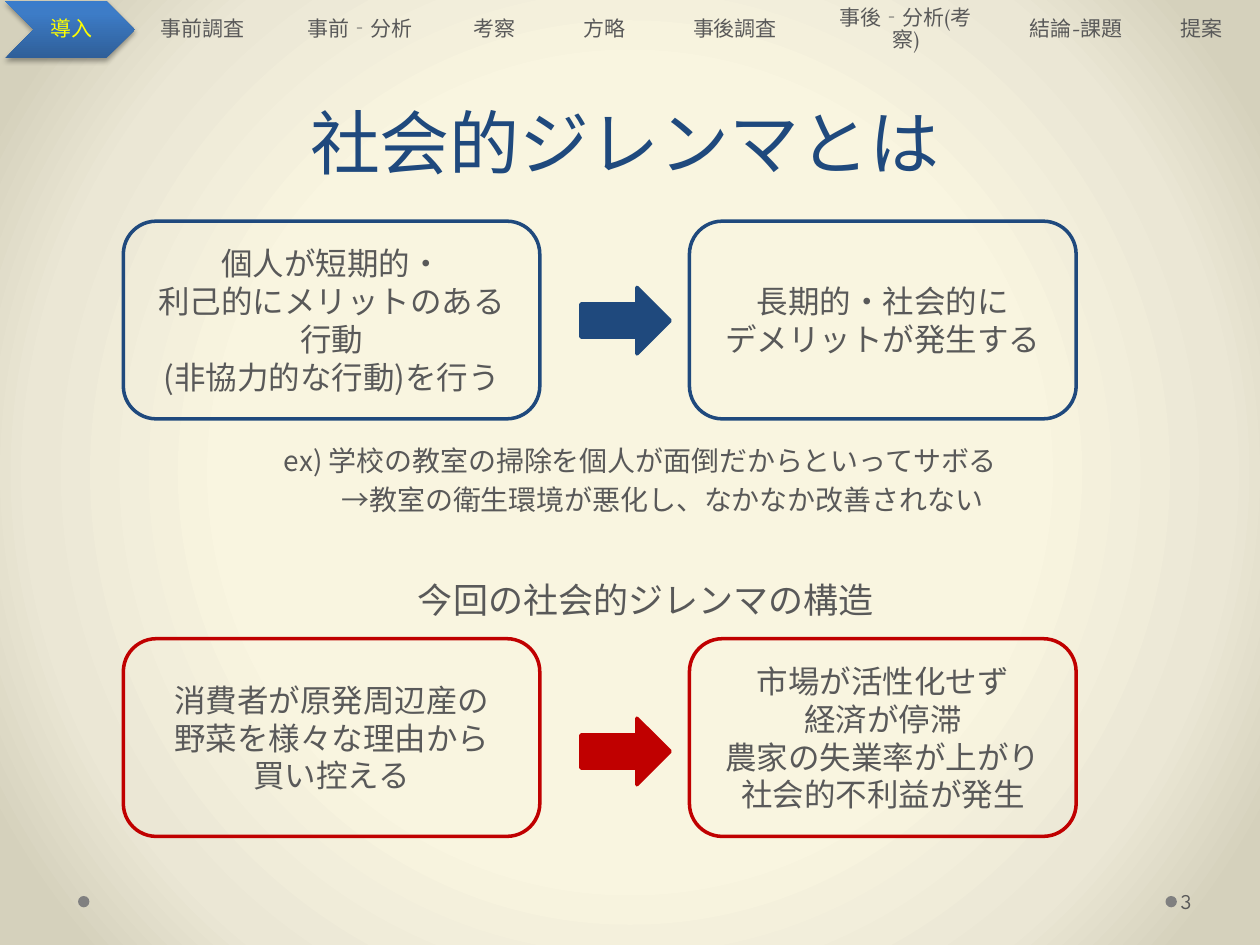
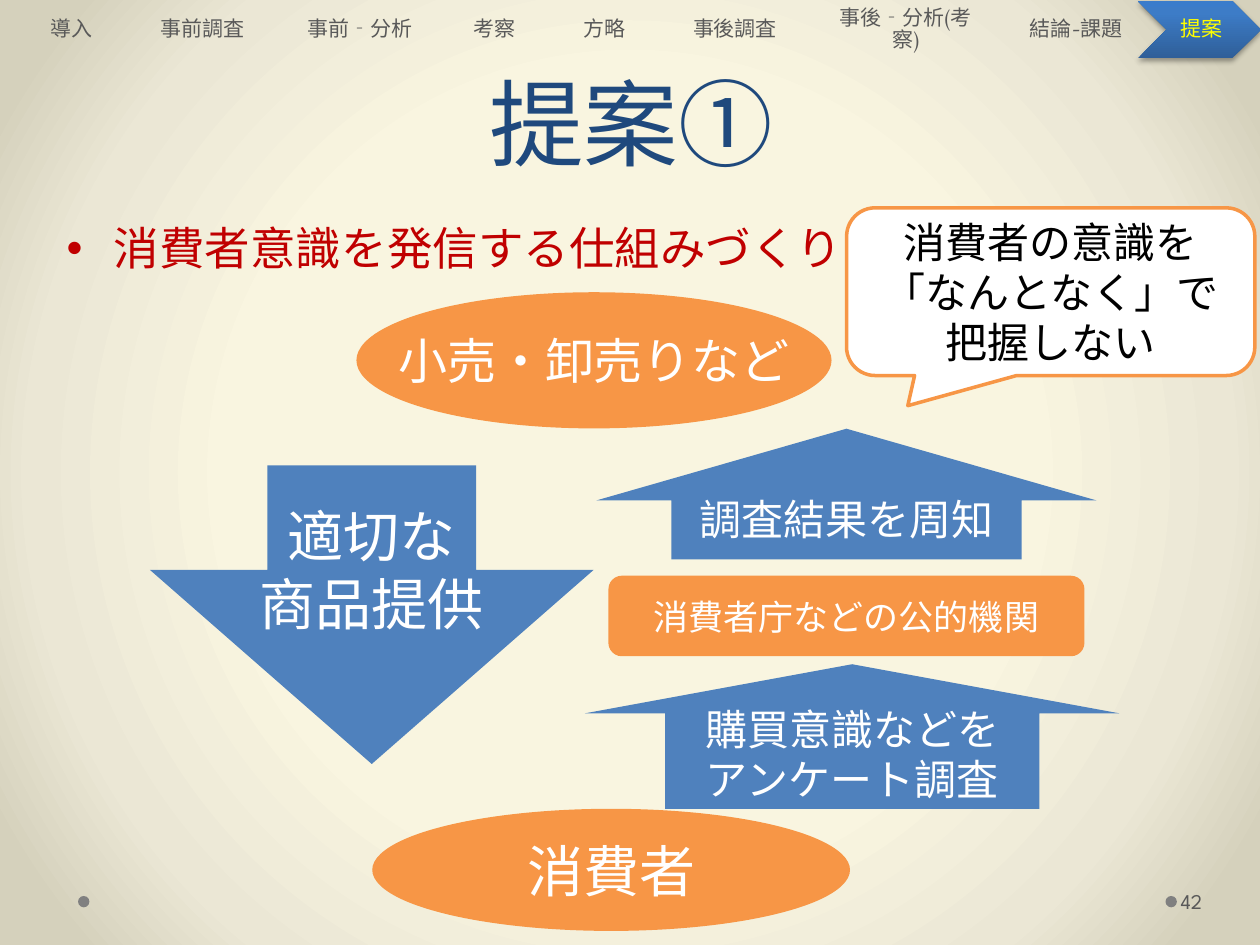
import pptx
import pptx.util
import pptx.dml.color
import pptx.enum.shapes
import pptx.enum.text
import pptx.oxml
import pptx.oxml.ns

Pt = pptx.util.Pt
RGB = pptx.dml.color.RGBColor
SHAPE = pptx.enum.shapes.MSO_SHAPE
ANCHOR = pptx.enum.text.MSO_ANCHOR
ALIGN = pptx.enum.text.PP_ALIGN

NAVY = RGB(0x1F, 0x49, 0x7D)
RED = RGB(0xC0, 0x00, 0x00)
BLUE = RGB(0x4F, 0x81, 0xBD)
ORANGE = RGB(0xF7, 0x96, 0x46)
TEXT_GREY = RGB(0x59, 0x59, 0x59)
DOT_GREY = RGB(0x80, 0x80, 0x80)
YELLOW = RGB(0xFF, 0xFF, 0x00)
WHITE = RGB(0xFF, 0xFF, 0xFF)
BLACK = RGB(0x00, 0x00, 0x00)
PAPER_STOPS = [(50, RGB(0xF9, 0xF5, 0xE0)), (76, RGB(0xEB, 0xE7, 0xD5)), (92, RGB(0xD5, 0xD1, 0xBC))]
CHEVRON_STOPS = [(0, RGB(0x2F, 0x5F, 0x99)), (80, RGB(0x3D, 0x7C, 0xC7)), (100, RGB(0x3A, 0x7C, 0xCB))]
RADIAL = '<a:path path="circle"><a:fillToRect l="50000" t="50000" r="50000" b="50000"/></a:path>'
UPWARD = '<a:lin ang="16200000" scaled="0"/>'

BODY_FONT, HEAD_FONT, NUMBER_FONT = "Noto Sans CJK JP", "Vollkorn", "League Spartan"
NS = 'xmlns:a="http://schemas.openxmlformats.org/drawingml/2006/main"'

SECTIONS = [("導入", 42), ("事前調査", 64), ("事前‐分析", 73.4), ("考察", 37.4), ("方略", 44.6),
            ("事後調査", 62), ("事後‐分析(考察)", 90), ("結論-課題", 62), ("提案", 38)]
NAV_LEFT, NAV_TOP, NAV_HEIGHT, NAV_GAP = 19, 0.7, 32.4, 21.5
CHEVRON_OVERHANG = 16

CENTRED = {"alignment": ALIGN.CENTER}
MIDDLE = {"vertical_anchor": ANCHOR.MIDDLE, "word_wrap": True}
UNWRAPPED = {"vertical_anchor": ANCHOR.MIDDLE, "word_wrap": False}


def apply(target, values):
    for name, value in values.items():
        setattr(target, name, value)


def insets(left, top, right, bottom):
    return {"margin_left": Pt(left), "margin_top": Pt(top),
            "margin_right": Pt(right), "margin_bottom": Pt(bottom)}


def set_gradient(properties, stops, direction):
    """Replace the solid fill inside properties with a gradient."""
    stop_xml = "".join(f'<a:gs pos="{pos * 1000}"><a:srgbClr val="{colour}"/></a:gs>'
                       for pos, colour in stops)
    gradient = pptx.oxml.parse_xml(
        f'<a:gradFill {NS} rotWithShape="1"><a:gsLst>{stop_xml}</a:gsLst>{direction}</a:gradFill>')
    solid = properties.find(pptx.oxml.ns.qn("a:solidFill"))
    properties.replace(solid, gradient)


def write(frame, lines, size, colour, font=BODY_FONT, frame_format=MIDDLE, line_format=CENTRED):
    """Fill a text frame with one paragraph per line, and return the paragraphs."""
    frame.text = "\n".join(lines)
    apply(frame, frame_format)
    for paragraph in frame.paragraphs:
        apply(paragraph, line_format)
        for run in paragraph.runs:
            apply(run.font, {"name": font, "size": Pt(size)})
            run.font.color.rgb = colour
            run.font._element.find(pptx.oxml.ns.qn("a:latin")).addnext(
                pptx.oxml.parse_xml(f'<a:ea {NS} typeface="{BODY_FONT}"/>'))
    return frame.paragraphs


def add_text(slide, box, lines, size, colour, **formats):
    frame = slide.shapes.add_textbox(*map(Pt, box)).text_frame
    return write(frame, lines, size, colour, **formats)


def add_figure(slide, kind, box, fill=None, line=None, adjustments=()):
    figure = slide.shapes.add_shape(kind, *map(Pt, box))
    figure.shadow.inherit = False
    for index, value in enumerate(adjustments):
        figure.adjustments[index] = value
    for format_fill, colour in ((figure.fill, fill), (figure.line.fill, line)):
        if colour is None:
            format_fill.background()
        else:
            format_fill.solid()
            format_fill.fore_color.rgb = colour
    if line is not None:
        figure.line.width = Pt(2)
    return figure


def add_chevron(slide, box):
    properties = add_figure(slide, SHAPE.CHEVRON, box, BLUE)._element.spPr
    set_gradient(properties, CHEVRON_STOPS, UPWARD)
    properties.find(pptx.oxml.ns.qn("a:effectLst")).append(pptx.oxml.parse_xml(
        f'<a:outerShdw {NS} blurRad="{Pt(3.1)}" dist="{Pt(1.8)}" dir="5400000" rotWithShape="0">'
        '<a:srgbClr val="000000"><a:alpha val="35000"/></a:srgbClr></a:outerShdw>'))


def add_navigation(slide, current):
    left = NAV_LEFT
    for section, width in SECTIONS:
        if section == current:
            add_chevron(slide, (left - CHEVRON_OVERHANG, NAV_TOP,
                                width + 2 * CHEVRON_OVERHANG, NAV_HEIGHT))
        add_text(slide, (left, NAV_TOP, width, NAV_HEIGHT), [section], 12,
                 YELLOW if section == current else TEXT_GREY, font=HEAD_FONT,
                 frame_format=MIDDLE | insets(3.6, 1.4, 1.4, 1.4),
                 line_format=CENTRED | {"line_spacing": 0.9})
        left += width + NAV_GAP


def add_footer(slide, number):
    for left in (44.6, 666):
        add_figure(slide, SHAPE.OVAL, (left, 512, 6.5, 6.5), DOT_GREY)
    add_text(slide, (672.5, 500.4, 44, 28.8), [number], 12, TEXT_GREY, font=NUMBER_FONT,
             frame_format=MIDDLE | insets(2.2, 3.6, 3.6, 3.6), line_format={})


def start_slide(deck, title, title_box, title_size, section, number):
    slide = deck.slides.add_slide(deck.slide_layouts[5])
    heading = slide.shapes.title
    apply(heading, dict(zip(("left", "top", "width", "height"), map(Pt, title_box))))
    write(heading.text_frame, [title], title_size, NAVY, HEAD_FONT,
          {"vertical_anchor": ANCHOR.BOTTOM, "word_wrap": True,
           "auto_size": pptx.enum.text.MSO_AUTO_SIZE.NONE},
          CENTRED | {"line_spacing": Pt(58)})
    add_footer(slide, number)
    add_navigation(slide, section)
    return slide


def add_dilemma(slide, box, colour, cause, effect, arrow_drop):
    """Draw cause, arrow and effect; arrow_drop is the arrow's distance from the top."""
    left, top, width, height = box
    cause_width, effect_width = 238, 221
    panels = [(left, cause_width, cause), (left + width - effect_width, effect_width, effect)]
    for panel_left, panel_width, lines in panels:
        panel = add_figure(slide, SHAPE.ROUNDED_RECTANGLE,
                           (panel_left, top, panel_width, height), line=colour)
        write(panel.text_frame, lines, 18, TEXT_GREY)
    add_figure(slide, SHAPE.RIGHT_ARROW, (left + 261.5, top + arrow_drop, 51, 38), colour, colour)


def build_dilemma_slide(deck):
    slide = start_slide(deck, "社会的ジレンマとは", (33, 37.4, 648, 71.3), 40, "導入", "3")
    add_dilemma(slide, (70.5, 126.4, 544.5, 113), NAVY,
                ["個人が短期的・", "利己的にメリットのある行動", "(非協力的な行動)を行う"],
                ["長期的・社会的に", "デメリットが発生する"], 37.8)
    example = add_text(slide, (36.7, 250, 659, 52),
                       ["ex) 学校の教室の掃除を個人が面倒だからといってサボる",
                        "→教室の衛生環境が悪化し、なかなか改善されない"], 16, TEXT_GREY,
                       frame_format={"word_wrap": True},
                       line_format=CENTRED | {"space_after": Pt(3.2)})
    example[1]._p.get_or_add_pPr().set("marL", str(Pt(25)))
    add_text(slide, (231.8, 327, 277, 31.7), ["今回の社会的ジレンマの構造"], 20, TEXT_GREY,
             frame_format={"word_wrap": False}, line_format={})
    add_dilemma(slide, (70.5, 365, 544.5, 113), RED,
                ["消費者が原発周辺産の", "野菜を様々な理由から", "買い控える"],
                ["市場が活性化せず", "経済が停滞", "農家の失業率が上がり", "社会的不利益が発生"], 45.4)


def add_bullet(slide, box, line):
    paragraph = add_text(slide, box, [line], 26, RED,
                         frame_format={"word_wrap": True}, line_format={})[0]
    properties = paragraph._p.get_or_add_pPr()
    apply_indent = {"marL": Pt(27), "indent": -Pt(27)}
    for name, value in apply_indent.items():
        properties.set(name, str(int(value)))
    properties.append(pptx.oxml.parse_xml(f'<a:buFont {NS} typeface="Arial"/>'))
    properties.append(pptx.oxml.parse_xml(f'<a:buChar {NS} char="•"/>'))


def add_market_cycle(slide, box):
    """Draw the flow between consumers, public bodies and retailers."""
    left, top = box[:2]
    parts = [
        (SHAPE.ROUNDED_RECTANGLE, (262, 162, 272, 46), ORANGE, (), 20, ["消費者庁などの公的機関"]),
        (SHAPE.UP_ARROW, (255, 78, 286, 74.6), BLUE, (0.7, 0.55), 24, ["調査結果を周知"]),
        (SHAPE.DOWN_ARROW, (0, 99, 253.5, 170.6), BLUE, (0.47, 0.65), 32, ["適切な", "商品提供"]),
        (SHAPE.UP_ARROW, (248.5, 212.6, 305.5, 82.6), BLUE, (0.7, 0.34), 24,
         ["購買意識などを", "アンケート調査"]),
        (SHAPE.OVAL, (127, 295.2, 273, 69.8), ORANGE, (), 32, ["消費者"]),
        (SHAPE.OVAL, (118, 0, 271.5, 77.8), ORANGE, (), 28, ["小売・卸売りなど"]),
    ]
    for kind, (x, y, width, height), fill, adjustments, size, lines in parts:
        part = add_figure(slide, kind, (left + x, top + y, width, height), fill,
                          adjustments=adjustments)
        write(part.text_frame, lines, size, WHITE, frame_format=UNWRAPPED)


def build_proposal_slide(deck):
    slide = start_slide(deck, "提案①", (36.7, 43.2, 648, 62.6), 54, "提案", "42")
    add_bullet(slide, (31, 122.4, 680, 40), "消費者意識を発信する仕組みづくり")
    add_market_cycle(slide, (85.7, 167, 554, 365))
    remark = add_figure(slide, SHAPE.ROUNDED_RECTANGULAR_CALLOUT, (483.8, 118.8, 233.3, 95.8),
                        WHITE, ORANGE, (-0.35, 0.68, 0.17))
    write(remark.text_frame, ["消費者の意識を", "「なんとなく」で", "把握しない"], 24, BLACK,
          frame_format=UNWRAPPED)


def main():
    deck = pptx.Presentation()
    apply(deck, {"slide_width": Pt(720), "slide_height": Pt(540)})
    master = deck.slide_master
    master.background.fill.solid()
    master.background.fill.fore_color.rgb = WHITE
    set_gradient(master._element.find(".//" + pptx.oxml.ns.qn("p:bgPr")), PAPER_STOPS, RADIAL)
    build_dilemma_slide(deck)
    build_proposal_slide(deck)
    deck.save("out.pptx")


if __name__ == "__main__":
    main()
